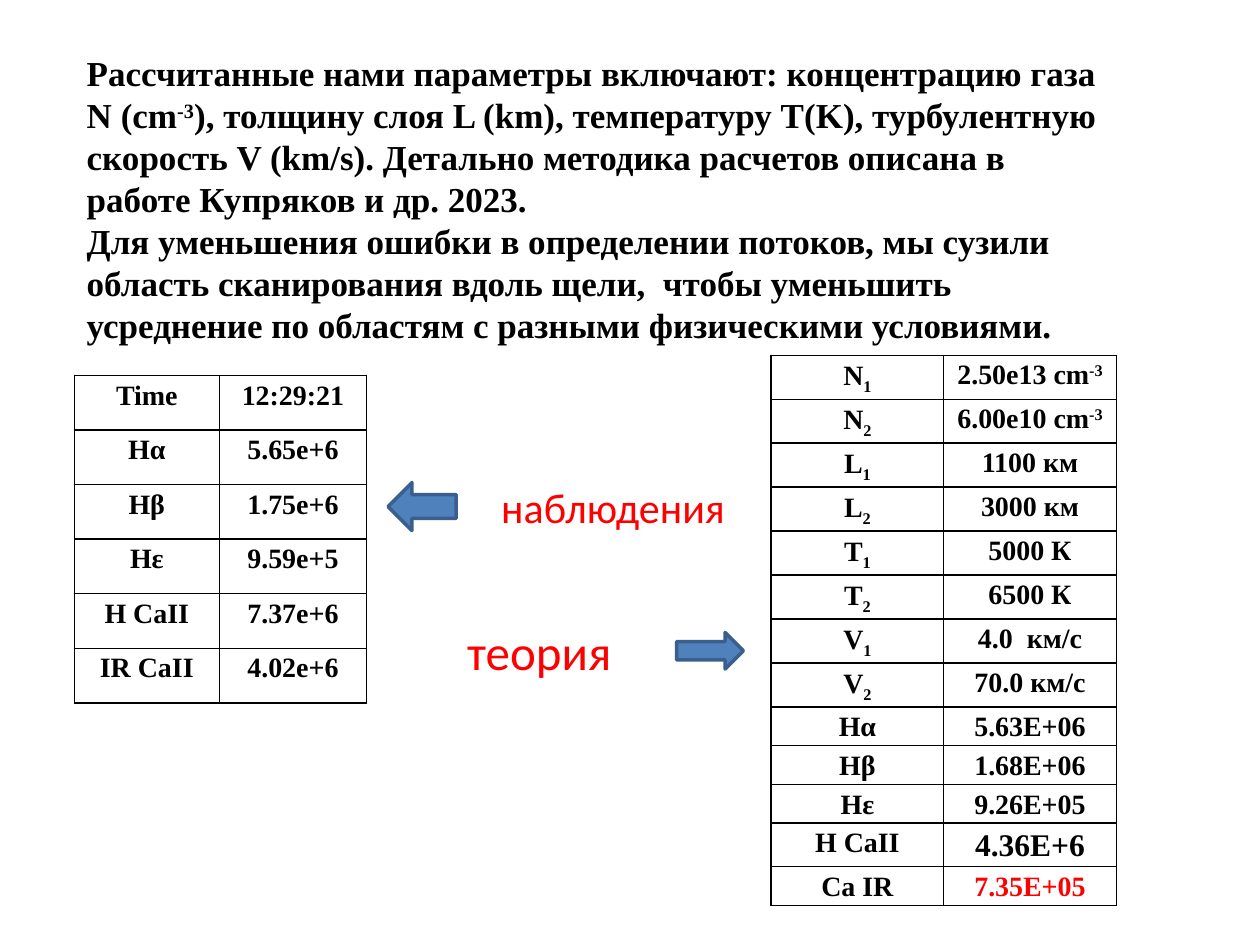
"""Build a slide comparing observed and modelled spectral line fluxes."""
from dataclasses import dataclass

from lxml.etree import SubElement
from pptx import Presentation
from pptx.dml.color import RGBColor
from pptx.enum.shapes import MSO_SHAPE
from pptx.enum.text import MSO_AUTO_SIZE, PP_ALIGN
from pptx.oxml.ns import qn
from pptx.util import Inches, Pt

BLACK = RGBColor(0x00, 0x00, 0x00)
RED = RGBColor(0xFF, 0x00, 0x00)
BLUE = RGBColor(0x4F, 0x81, 0xBD)
DARK_BLUE = RGBColor(0x3A, 0x5F, 0x8C)
SLIDE_WIDTH, SLIDE_HEIGHT = Inches(10), Inches(7.5)
SERIF, SANS = "Times New Roman", "Calibri"
SUBSCRIPT, SUPERSCRIPT = -25000, 30000


@dataclass(frozen=True)
class Frame:
    """A place on the slide in percent of its width and height."""
    left: float
    top: float
    width: float
    height: float

    def lengths(self) -> tuple[int, int, int, int]:
        """Return left, top, width and height as slide lengths."""
        return (int(SLIDE_WIDTH * self.left / 100), int(SLIDE_HEIGHT * self.top / 100),
                int(SLIDE_WIDTH * self.width / 100), int(SLIDE_HEIGHT * self.height / 100))


@dataclass(frozen=True)
class Span:
    """A stretch of text in one format."""
    text: str
    size: int = 16
    color: RGBColor = BLACK
    baseline: int = 0
    font: str = SERIF
    bold: bool = True


@dataclass(frozen=True)
class Grid:
    """A table with a frame, relative column widths and rows of cells."""
    frame: Frame
    columns: tuple[float, ...]
    rows: list[tuple[list[Span], ...]]


@dataclass(frozen=True)
class Arrow:
    """A block arrow pointing at a table."""
    preset: MSO_SHAPE
    frame: Frame


def plain(*texts: str) -> tuple[list[Span], ...]:
    """Return a row of cells with one span each."""
    return tuple([Span(text)] for text in texts)


def indexed(symbol: str, index: str) -> list[Span]:
    """Return a symbol with a subscript."""
    return [Span(symbol), Span(index, baseline=SUBSCRIPT)]


def density(value: str) -> list[Span]:
    """Return a gas density with its unit."""
    return [Span(f"{value} cm"), Span("-3", baseline=SUPERSCRIPT)]


INTRODUCTION = [
    [Span("Рассчитанные нами параметры включают: концентрацию газа N (cm", 20),
     Span("-3", 20, baseline=SUPERSCRIPT),
     Span("), толщину слоя L (km), температуру T(K), турбулентную скорость V (km/s). "
          "Детально методика расчетов описана в работе Купряков и др. 2023.", 20)],
    [Span("Для уменьшения ошибки в определении потоков, мы сузили область сканирования "
          "вдоль щели,  чтобы уменьшить усреднение по областям с разными физическими "
          "условиями.", 20)],
]
OBSERVATIONS = Grid(Frame(5.9, 39.73, 23.2, 34.67), (1.15, 1.17), [
    plain("Time", "12:29:21"),
    plain("Hα", "5.65e+6"),
    plain("Hβ", "1.75e+6"),
    plain("Hε", "9.59e+5"),
    plain("H CaII", "7.37e+6"),
    plain("IR CaII", "4.02e+6"),
])
MODEL = Grid(Frame(61.2, 37.6, 27.4, 53.3), (1, 1), [
    (indexed("N", "1"), density("2.50e13")),
    (indexed("N", "2"), density("6.00e10")),
    (indexed("L", "1"), [Span("1100 км")]),
    (indexed("L", "2"), [Span("3000 км")]),
    (indexed("T", "1"), [Span("5000 К")]),
    (indexed("T", "2"), [Span("6500 К")]),
    (indexed("V", "1"), [Span("4.0  км/с")]),
    (indexed("V", "2"), [Span("70.0 км/с")]),
    plain("Hα", "5.63E+06"),
    plain("Hβ", "1.68E+06"),
    plain("Hε", "9.26E+05"),
    ([Span("H CaII")], [Span("4.36E+6", 18)]),
    ([Span("Ca IR")], [Span("7.35E+05", color=RED)]),
])
LABELS = [
    (Frame(38.8, 50.27, 20, 6.8), Span("наблюдения", 24, RED, font=SANS, bold=False)),
    (Frame(36.1, 65.07, 13.6, 7.6), Span("теория", 28, RED, font=SANS, bold=False)),
]
ARROWS = [
    Arrow(MSO_SHAPE.LEFT_ARROW, Frame(30.8, 51.07, 5.4, 5.07)),
    Arrow(MSO_SHAPE.RIGHT_ARROW, Frame(53.7, 66.93, 5.3, 3.87)),
]


def write_spans(paragraph, spans: list[Span]) -> None:
    """Add formatted runs to a paragraph."""
    for span in spans:
        run = paragraph.add_run()
        run.text = span.text
        run.font.name = span.font
        run.font.size = Pt(span.size)
        run.font.bold = span.bold
        run.font.color.rgb = span.color
        if span.baseline:
            run._r.get_or_add_rPr().set("baseline", str(span.baseline))


def draw_text(page, frame: Frame, paragraphs: list[list[Span]], wrap: bool) -> None:
    """Draw a text box that fits its text."""
    text_frame = page.shapes.add_textbox(*frame.lengths()).text_frame
    text_frame.word_wrap = wrap
    text_frame.auto_size = MSO_AUTO_SIZE.SHAPE_TO_FIT_TEXT
    for number, spans in enumerate(paragraphs):
        paragraph = text_frame.add_paragraph() if number else text_frame.paragraphs[0]
        write_spans(paragraph, spans)


def outline_cell(cell) -> None:
    """Give a cell thin black borders and no fill."""
    properties = cell._tc.get_or_add_tcPr()
    for side in ("a:lnL", "a:lnR", "a:lnT", "a:lnB"):
        border = SubElement(properties, qn(side), w=str(Pt(1)))
        fill = SubElement(border, qn("a:solidFill"))
        SubElement(fill, qn("a:srgbClr"), val=str(BLACK))
    cell.fill.background()


def draw_table(page, grid: Grid) -> None:
    """Draw a bordered table with centred cells."""
    left, top, width, height = grid.frame.lengths()
    table = page.shapes.add_table(
        len(grid.rows), len(grid.columns), left, top, width, height).table
    table.first_row = table.horz_banding = False
    for column, share in zip(table.columns, grid.columns):
        column.width = int(width * share / sum(grid.columns))
    for row, contents in zip(table.rows, grid.rows):
        row.height = height // len(grid.rows)
        for cell, spans in zip(row.cells, contents):
            cell.margin_left = cell.margin_right = Inches(0.07)
            cell.margin_top = cell.margin_bottom = 0
            outline_cell(cell)
            paragraph = cell.text_frame.paragraphs[0]
            paragraph.alignment = PP_ALIGN.CENTER
            paragraph.line_spacing = 1.15
            write_spans(paragraph, spans)


def draw_arrow(page, arrow: Arrow) -> None:
    """Draw a filled block arrow."""
    shape = page.shapes.add_shape(arrow.preset, *arrow.frame.lengths())
    shape.shadow.inherit = False
    shape.fill.solid()
    shape.fill.fore_color.rgb = BLUE
    shape.line.color.rgb = DARK_BLUE
    shape.line.width = Pt(2)


def main() -> None:
    """Build and save the deck."""
    deck = Presentation()
    deck.slide_width, deck.slide_height = SLIDE_WIDTH, SLIDE_HEIGHT
    page = deck.slides.add_slide(deck.slide_layouts[6])
    draw_text(page, Frame(5.9, 4.8, 82.7, 32.8), INTRODUCTION, wrap=True)
    for grid in (OBSERVATIONS, MODEL):
        draw_table(page, grid)
    for frame, label in LABELS:
        draw_text(page, frame, [[label]], wrap=False)
    for arrow in ARROWS:
        draw_arrow(page, arrow)
    deck.save("out.pptx")


if __name__ == "__main__":
    main()
